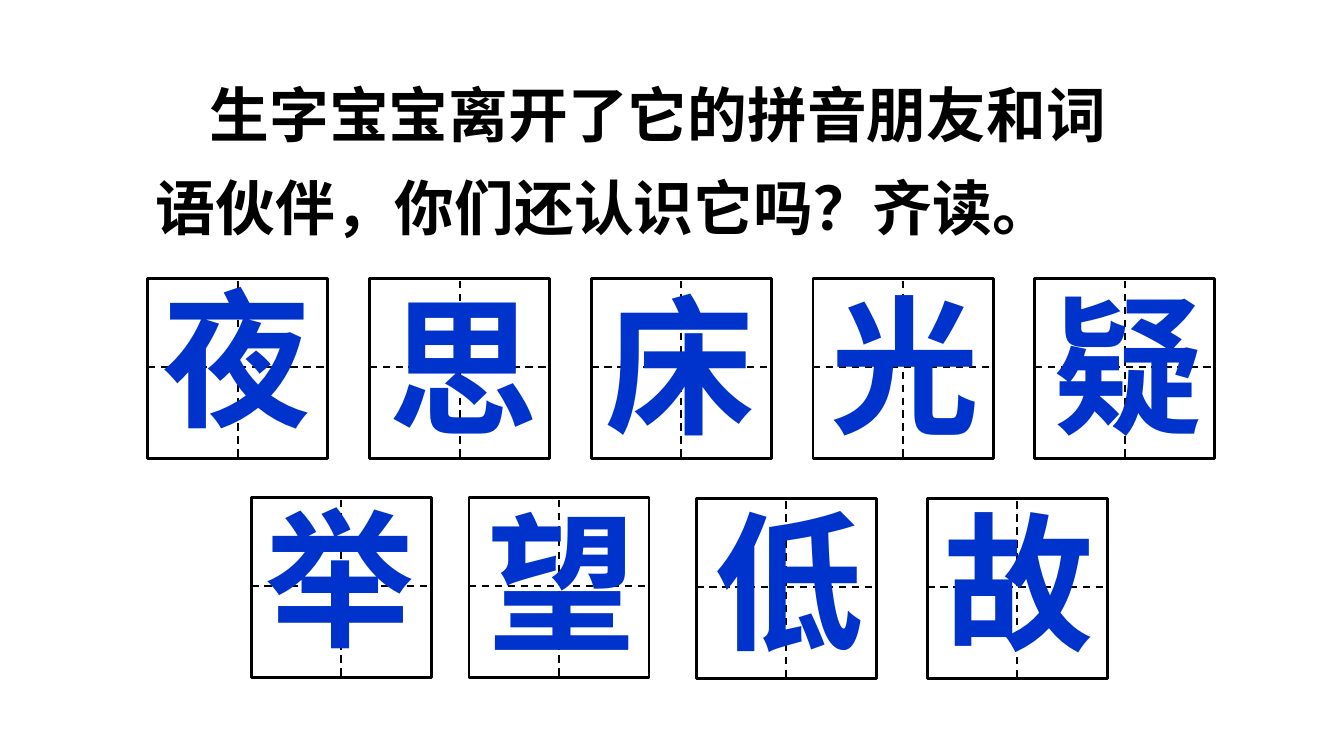
import pptx
import pptx.util
import pptx.dml.color
import pptx.enum.dml
import pptx.enum.shapes
import pptx.enum.text
import pptx.oxml.ns
from lxml import etree

FONT = "Noto Sans CJK SC"
INK, BLUE = "000000", "0033CC"
WIDE = 10
HIGH = WIDE * 9 / 16
SIDE = 1.34  # side of a writing square
inch = pptx.util.Inches


def tint(code):
    return pptx.dml.color.RGBColor.from_string(code)


def write(shape, text, size, color=INK, space=1.0, indent=0):
    frame = shape.text_frame
    frame.word_wrap = True
    frame.auto_size = pptx.enum.text.MSO_AUTO_SIZE.NONE
    frame.vertical_anchor = pptx.enum.text.MSO_ANCHOR.TOP
    para = frame.paragraphs[0]
    para.alignment = pptx.enum.text.PP_ALIGN.LEFT
    para.line_spacing = space
    if indent:
        para._p.get_or_add_pPr().set("indent", str(inch(indent)))
    run = para.add_run()
    run.text = text
    font = run.font
    font.size, font.bold, font.name = pptx.util.Pt(size), True, FONT
    font.color.rgb = tint(color)
    east = etree.SubElement(run._r.get_or_add_rPr(), pptx.oxml.ns.qn("a:ea"))
    east.set("typeface", FONT)


def dash(group, x1, y1, x2, y2):
    line = group.shapes.add_connector(
        pptx.enum.shapes.MSO_CONNECTOR.STRAIGHT,
        inch(x1), inch(y1), inch(x2), inch(y2))
    line.line.color.rgb = tint(INK)
    line.line.width = pptx.util.Pt(1)
    line.line.dash_style = pptx.enum.dml.MSO_LINE.DASH
    etree.SubElement(line._element.spPr, pptx.oxml.ns.qn("a:effectLst"))


def head(slide, left, top, width, height):
    title = slide.shapes.title
    title.left, title.top = inch(left), inch(top)
    title.width, title.height = inch(width), inch(height)
    write(title, "生字宝宝离开了它的拼音朋友和词语伙伴，你们还认识它吗？齐读。",
          32, space=1.3, indent=0.4)


def tile(slide, char, left, top, dx, dy):
    """A square with a dashed cross; dx and dy shift its character."""
    group = slide.shapes.add_group_shape()
    # Frame
    box = group.shapes.add_shape(
        pptx.enum.shapes.MSO_SHAPE.RECTANGLE,
        inch(left), inch(top), inch(SIDE), inch(SIDE))
    box.shadow.inherit = False
    box.fill.background()
    box.line.color.rgb = tint(INK)
    box.line.width = pptx.util.Pt(1.5)
    # Cross
    midx, midy = left + SIDE / 2, top + SIDE / 2 - 0.01
    dash(group, left, midy, left + SIDE, midy)
    dash(group, midx, top + 0.02, midx, top + SIDE + 0.02)
    # Character
    text = group.shapes.add_textbox(
        inch(left + dx), inch(top + dy), inch(1.38), inch(1.45))
    write(text, char, 80, BLUE)


def main():
    deck = pptx.Presentation()
    deck.slide_width, deck.slide_height = inch(WIDE), inch(HIGH)
    slide = deck.slides.add_slide(deck.slide_layouts[5])
    head(slide, 1.06, 0.37, 7.64, 1.5)

    # Upper row: even steps
    shifts = [(0.01, -0.14), (0.04, -0.08), (0.01, -0.09),
              (0.03, -0.09), (0.04, -0.09)]
    for col, (char, shift) in enumerate(zip("夜思床光疑", shifts)):
        tile(slide, char, 1.1 + 1.65 * col, 2.07, *shift)

    # Lower row: hand-set places
    lower = [("举", 1.87, 3.7, 0.01, -0.13), ("望", 3.49, 3.7, 0.04, -0.1),
             ("低", 5.18, 3.71, 0.04, -0.12), ("故", 6.9, 3.71, 0.03, -0.11)]
    for place in lower:
        tile(slide, *place)

    deck.save("out.pptx")


if __name__ == "__main__":
    main()
